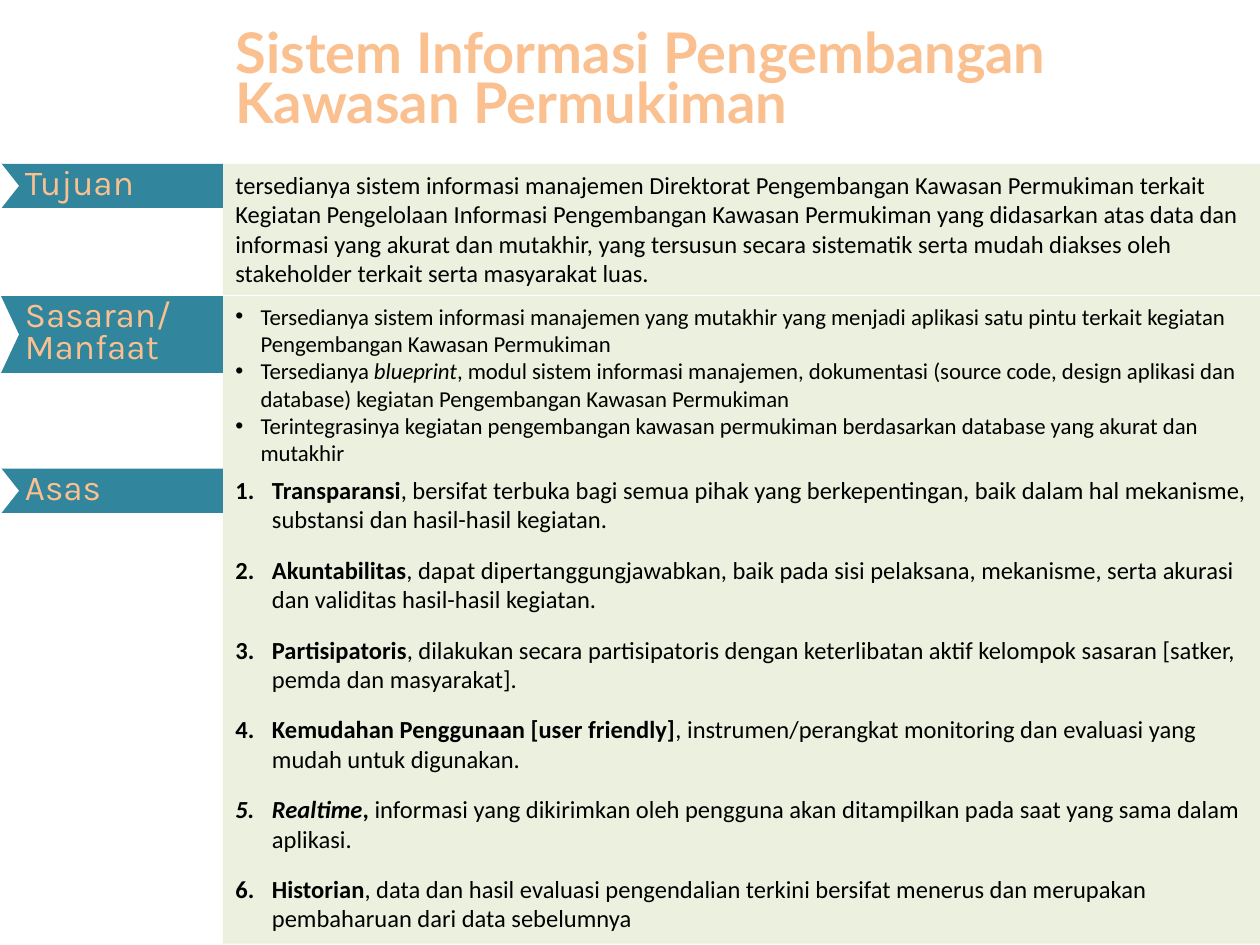
"""Build the slide on the settlement development information system."""
from dataclasses import dataclass
from typing import Optional

from lxml.etree import SubElement
from pptx import Presentation
from pptx.dml.color import RGBColor
from pptx.enum.shapes import MSO_SHAPE as Preset
from pptx.enum.text import MSO_ANCHOR as Anchor, PP_ALIGN as Align
from pptx.oxml.ns import qn
from pptx.util import Inches, Length, Pt

COLUMNS, ROWS = 100, 75
CELL = 0.1
SPLIT = 17.7
NOTCH_DEPTH, NOTCH_OVERLAP = 1.5, 0.3


@dataclass(frozen=True)
class Theme:
    title_font: str = "Lato"
    label_font: str = "Karla"
    body_font: str = "Calibri"
    title_size: int = 32
    label_size: int = 20
    body_size: int = 14
    bullet_size: int = 13
    peach: str = "FAC090"
    teal: str = "31859C"
    pale: str = "EBF1DE"
    white: str = "FFFFFF"
    black: str = "000000"
    tight: float = 0.75


@dataclass(frozen=True)
class Span:
    text: str
    bold: Optional[bool] = None
    italic: Optional[bool] = None


@dataclass(frozen=True)
class ListStyle:
    tag: str
    attribute: str
    value: str
    indent: float
    gap: int = 0


@dataclass(frozen=True)
class Section:
    labels: list[str]
    top: float
    label_height: float
    height: float
    items: list[list[Span]]
    size: int
    style: Optional[ListStyle] = None


THEME = Theme()
DOTS = ListStyle("a:buChar", "char", "•", 2)
NUMBERS = ListStyle("a:buAutoNum", "type", "arabicPeriod", 2.9, 12)


def principle(name: str, meaning: str) -> list[Span]:
    return [Span(name, bold=True), Span(f", {meaning}")]


SECTIONS = [
    Section(["Tujuan"], 13, 3.5, 10.4, [[Span(
        "tersedianya sistem informasi manajemen Direktorat Pengembangan Kawasan Permukiman "
        "terkait Kegiatan Pengelolaan Informasi Pengembangan Kawasan Permukiman yang didasarkan "
        "atas data dan informasi yang akurat dan mutakhir, yang tersusun secara sistematik serta "
        "mudah diakses oleh stakeholder terkait serta masyarakat luas.")]], THEME.body_size),
    Section(["Sasaran/", "Manfaat"], 23.5, 6.1, 14.1, [
        [Span("Tersedianya sistem informasi manajemen yang mutakhir yang menjadi aplikasi satu "
              "pintu terkait kegiatan Pengembangan Kawasan Permukiman")],
        [Span("Tersedianya "), Span("blueprint", italic=True),
         Span(", modul sistem informasi manajemen, dokumentasi (source code, design aplikasi "
              "dan database) kegiatan Pengembangan Kawasan Permukiman")],
        [Span("Terintegrasinya kegiatan pengembangan kawasan permukiman berdasarkan database "
              "yang akurat dan mutakhir")],
    ], THEME.bullet_size, DOTS),
    Section(["Asas"], 37.2, 3.5, 37.7, [
        principle("Transparansi", "bersifat terbuka bagi semua pihak yang berkepentingan, baik "
                  "dalam hal mekanisme, substansi dan hasil-hasil kegiatan."),
        principle("Akuntabilitas", "dapat dipertanggungjawabkan, baik pada sisi pelaksana, "
                  "mekanisme, serta akurasi dan validitas hasil-hasil kegiatan."),
        principle("Partisipatoris", "dilakukan secara partisipatoris dengan keterlibatan aktif "
                  "kelompok sasaran [satker, pemda dan masyarakat]."),
        principle("Kemudahan Penggunaan [user friendly]", "instrumen/perangkat monitoring dan "
                  "evaluasi yang mudah untuk digunakan."),
        [Span("Realtime", bold=True, italic=True), Span(", ", bold=True),
         Span("informasi yang dikirimkan oleh pengguna akan ditampilkan pada saat yang sama "
              "dalam aplikasi.")],
        principle("Historian", "data dan hasil evaluasi pengendalian terkini bersifat menerus "
                  "dan merupakan pembaharuan dari data sebelumnya"),
    ], THEME.body_size, NUMBERS),
]


def cells(count: float) -> Length:
    return Inches(round(count * CELL, 3))


def set_font(font, name: str, size: int, color: str) -> None:
    font.name, font.size = name, Pt(size)
    font.color.rgb = RGBColor.from_string(color)


def add_block(page, preset, left: float, top: float, width: float, height: float, color: str):
    block = page.shapes.add_shape(preset, *map(cells, (left, top, width, height)))
    block.shadow.inherit = False
    block.fill.solid()
    block.fill.fore_color.rgb = RGBColor.from_string(color)
    block.line.fill.background()
    block.text_frame.word_wrap = True
    block.text_frame.vertical_anchor = Anchor.TOP
    return block


def indent(para, left: float, first: float = 0) -> None:
    properties = para._p.get_or_add_pPr()
    properties.set("marL", str(cells(left)))
    properties.set("indent", str(cells(first)))


def add_marker(para, style: ListStyle) -> None:
    indent(para, style.indent, -style.indent)
    para.space_after = Pt(style.gap)
    properties = para._p.get_or_add_pPr()
    if style is DOTS:
        SubElement(properties, qn("a:buFont")).set("typeface", "Arial")
    SubElement(properties, qn(style.tag)).set(style.attribute, style.value)


def next_para(frame, index: int):
    para = frame.add_paragraph() if index else frame.paragraphs[0]
    para.alignment = Align.LEFT
    return para


def add_panel(page, section: Section) -> None:
    panel = add_block(page, Preset.RECTANGLE, SPLIT, section.top, COLUMNS - SPLIT,
                      section.height, THEME.pale)
    for index, spans in enumerate(section.items):
        para = next_para(panel.text_frame, index)
        if section.style:
            add_marker(para, section.style)
        set_font(para.font, THEME.body_font, section.size, THEME.black)
        for span in spans:
            run = para.add_run()
            run.text = span.text
            run.font.bold, run.font.italic = span.bold, span.italic


def add_label(page, section: Section) -> None:
    label = add_block(page, Preset.RECTANGLE, 0, section.top, SPLIT,
                      section.label_height, THEME.teal)
    for index, text in enumerate(section.labels):
        para = next_para(label.text_frame, index)
        indent(para, 1)
        para.line_spacing = THEME.tight
        set_font(para.font, THEME.label_font, THEME.label_size, THEME.peach)
        para.add_run().text = text
    span = section.label_height + NOTCH_OVERLAP
    middle = section.top + section.label_height / 2
    notch = add_block(page, Preset.ISOSCELES_TRIANGLE, (NOTCH_DEPTH - span) / 2,
                      middle - NOTCH_DEPTH / 2, span, NOTCH_DEPTH, THEME.white)
    notch.rotation = 90


def set_title(page, text: str) -> None:
    title = page.shapes.title
    title.left, title.top, title.width, title.height = map(
        cells, (SPLIT, 1.9, COLUMNS - SPLIT, 9.4))
    title.text_frame.vertical_anchor = Anchor.MIDDLE
    title.text_frame.text = text
    para = title.text_frame.paragraphs[0]
    para.alignment = Align.LEFT
    para.line_spacing = THEME.tight
    set_font(para.font, THEME.title_font, THEME.title_size, THEME.peach)
    para.font.bold = True


def main() -> None:
    deck = Presentation()
    deck.slide_width, deck.slide_height = cells(COLUMNS), cells(ROWS)
    page = deck.slides.add_slide(deck.slide_layouts.get_by_name("Title Only"))
    set_title(page, "Sistem Informasi Pengembangan Kawasan Permukiman")
    for section in SECTIONS:
        add_panel(page, section)
        add_label(page, section)
    deck.save("out.pptx")


if __name__ == "__main__":
    main()
